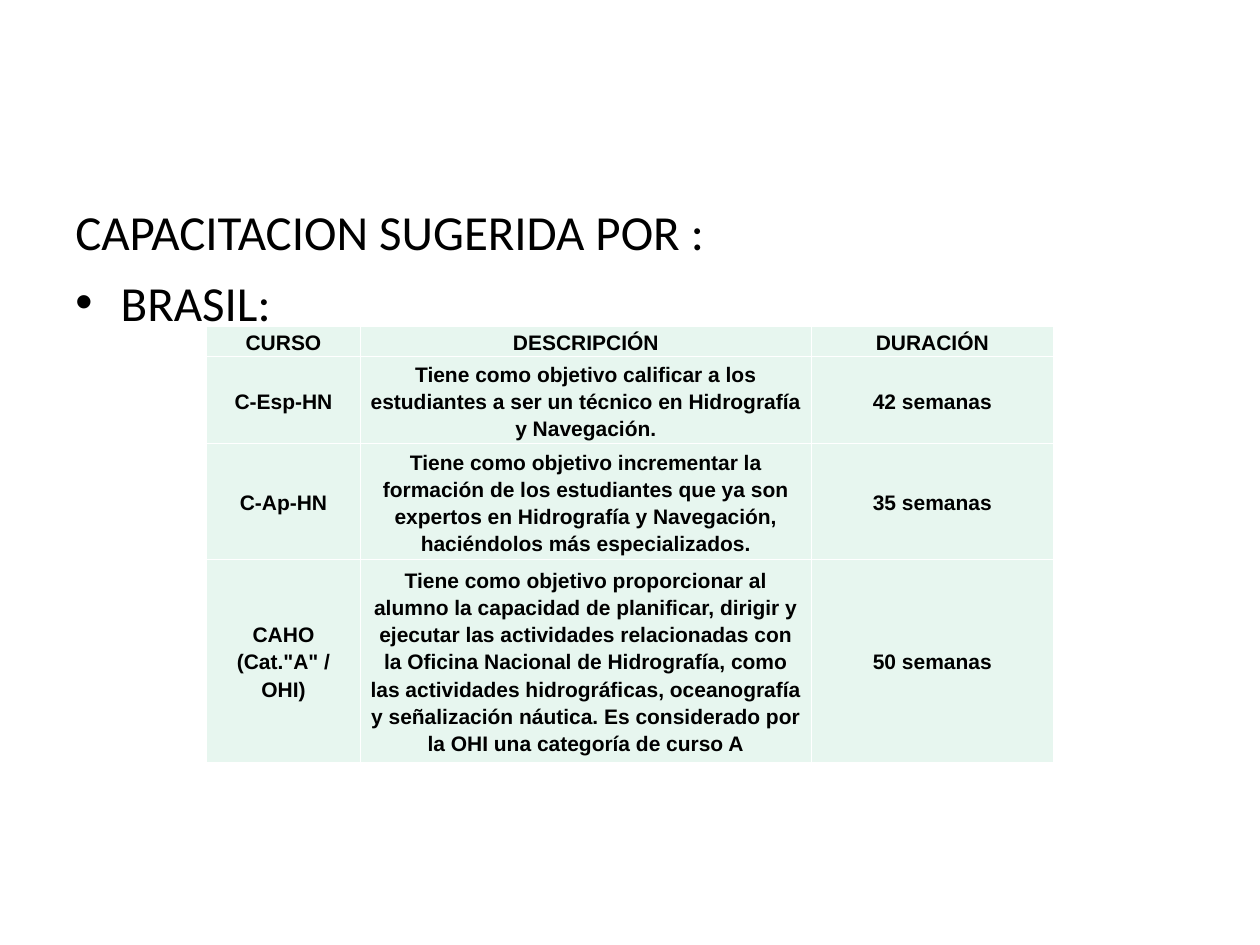
import pptx
import pptx.dml.color
import pptx.enum.text
import pptx.oxml
import pptx.oxml.ns
import pptx.util
from pptx.util import Inches

BLACK = pptx.dml.color.RGBColor(0x00, 0x00, 0x00)
WHITE = pptx.dml.color.RGBColor(0xFF, 0xFF, 0xFF)
MINT = pptx.dml.color.RGBColor(0xE7, 0xF6, 0xEF)

HEADING_FONT = {"name": "Calibri", "size": pptx.util.Pt(28)}
CELL_FONT = {"name": "Arial", "size": pptx.util.Pt(12), "bold": True}
HEADING_FRAME = {
    "word_wrap": True,
    "margin_left": Inches(0.1), "margin_right": Inches(0.1),
    "margin_top": Inches(0.05), "margin_bottom": Inches(0.05),
}
CELL_FORMAT = {
    "margin_left": Inches(0.08), "margin_right": Inches(0.08),
    "margin_top": 0, "margin_bottom": 0,
    "vertical_anchor": pptx.enum.text.MSO_ANCHOR.MIDDLE,
}
CELL_PARAGRAPH = {
    "alignment": pptx.enum.text.PP_ALIGN.CENTER,
    "line_spacing": 1.15,
}

COLUMN_WIDTHS = [1.22, 3.58, 1.92]
ROW_HEIGHTS = [0.24, 0.5, 0.92, 1.61]
COURSES = [
    ["CURSO", "DESCRIPCIÓN", "DURACIÓN"],
    ["C-Esp-HN",
     "Tiene como objetivo calificar a los estudiantes a ser un técnico en "
     "Hidrografía y Navegación.",
     "42 semanas"],
    ["C-Ap-HN",
     "Tiene como objetivo incrementar la formación de los estudiantes que ya "
     "son expertos en Hidrografía y Navegación, haciéndolos más especializados.",
     "35 semanas"],
    ['CAHO\n(Cat."A" / OHI)',
     "Tiene como objetivo proporcionar al alumno la capacidad de planificar, "
     "dirigir y ejecutar las actividades relacionadas con la Oficina Nacional "
     "de Hidrografía, como las actividades hidrográficas, oceanografía y "
     "señalización náutica. Es considerado por la OHI una categoría de curso A",
     "50 semanas"],
]


def apply(target, values):
    for name, value in values.items():
        setattr(target, name, value)


def style_runs(p, font):
    for r in p.runs:
        apply(r.font, font)
        r.font.color.rgb = BLACK


def add_bullet(p, indent):
    pPr = p._p.get_or_add_pPr()
    pPr.set("marL", str(indent))
    pPr.set("indent", str(-indent))
    ns = pptx.oxml.ns.nsdecls("a")
    pPr.append(pptx.oxml.parse_xml(f'<a:buFont {ns} typeface="Arial"/>'))
    pPr.append(pptx.oxml.parse_xml(f'<a:buChar {ns} char="•"/>'))


def add_borders(cell, color, width):
    tcPr = cell._tc.get_or_add_tcPr()
    # Border lines come before the fill in the cell properties
    for i, side in enumerate(("lnL", "lnR", "lnT", "lnB")):
        tcPr.insert(i, pptx.oxml.parse_xml(
            f'<a:{side} {pptx.oxml.ns.nsdecls("a")} w="{width}"><a:solidFill>'
            f'<a:srgbClr val="{color}"/></a:solidFill></a:{side}>'))


def add_heading(slide, left, top, width, height):
    tf = slide.shapes.add_textbox(left, top, width, height).text_frame
    apply(tf, HEADING_FRAME)
    tf.text = "CAPACITACION SUGERIDA POR :\nBRASIL:"
    for p in tf.paragraphs:
        p.space_before = pptx.util.Pt(7)
        style_runs(p, HEADING_FONT)
    add_bullet(tf.paragraphs[1], Inches(0.36))


def fill_cell(cell, text):
    cell.text = text
    apply(cell, CELL_FORMAT)
    for p in cell.text_frame.paragraphs:
        apply(p, CELL_PARAGRAPH)
        style_runs(p, CELL_FONT)
    cell.fill.solid()
    cell.fill.fore_color.rgb = MINT
    add_borders(cell, WHITE, pptx.util.Pt(1))


def add_course_table(slide, left, top, width, height):
    table = slide.shapes.add_table(
        len(ROW_HEIGHTS), len(COLUMN_WIDTHS), left, top, width, height).table
    for column, w in zip(table.columns, COLUMN_WIDTHS):
        column.width = Inches(w)
    for row, h, texts in zip(table.rows, ROW_HEIGHTS, COURSES):
        row.height = Inches(h)
        for cell, text in zip(row.cells, texts):
            fill_cell(cell, text)


def main():
    prs = pptx.Presentation()
    prs.slide_width, prs.slide_height = Inches(10), Inches(7.5)
    slide = prs.slides.add_slide(prs.slide_layouts[6])

    # Heading with the country
    add_heading(slide, Inches(0.5), Inches(1.55), Inches(9), Inches(5.15))
    # Suggested courses
    add_course_table(slide, Inches(1.64), Inches(2.59),
                     Inches(sum(COLUMN_WIDTHS)), Inches(sum(ROW_HEIGHTS)))

    prs.save("out.pptx")


if __name__ == "__main__":
    main()
